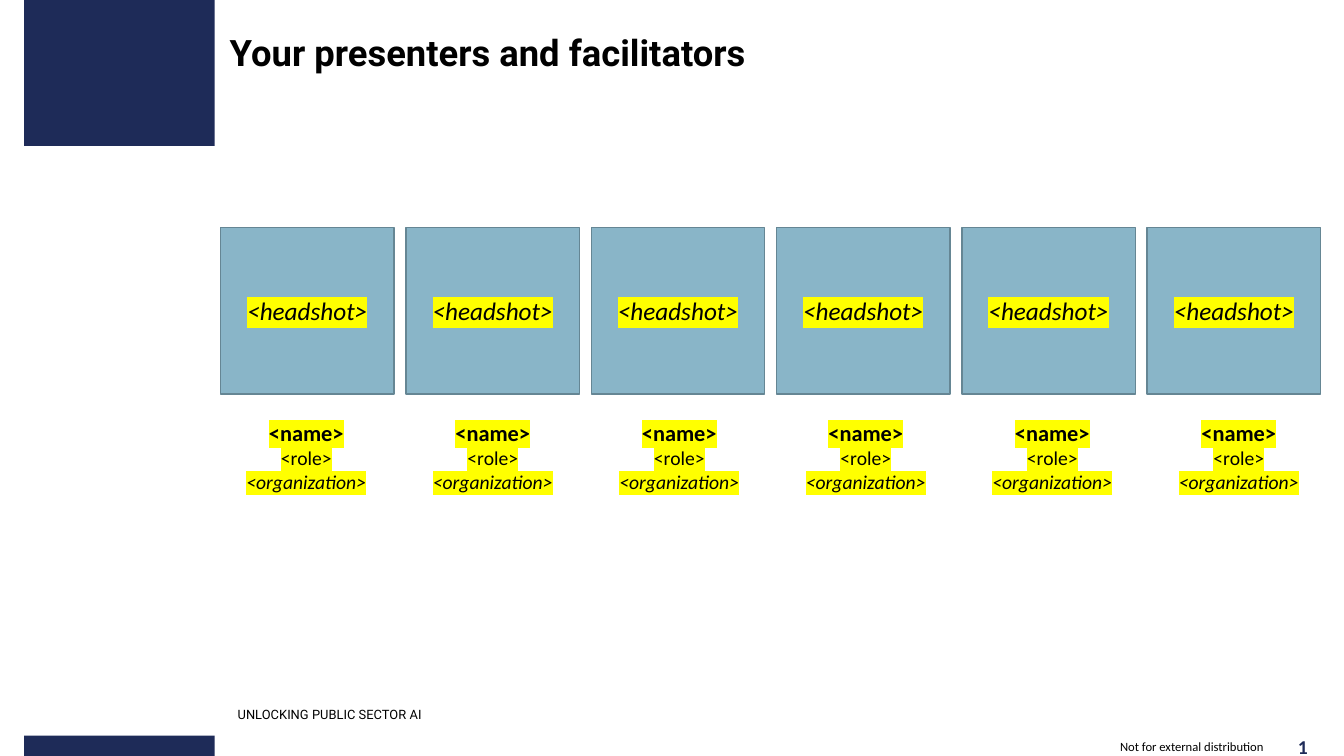
from dataclasses import dataclass

from lxml.etree import Element, SubElement
from pptx import Presentation
from pptx.dml.color import RGBColor
from pptx.enum.shapes import MSO_SHAPE
from pptx.enum.text import MSO_ANCHOR, PP_ALIGN
from pptx.oxml.ns import qn
from pptx.util import Cm, Pt

# Content
TITLE = "Your presenters and facilitators"
PROGRAMME = "UNLOCKING PUBLIC SECTOR AI"
NOTICE = "Not for external distribution"
PAGE_NUMBER = "1"
PRESENTERS = [("<headshot>", "<name>", "<role>", "<organization>")] * 6


@dataclass(frozen=True)
class Theme:
    navy: str = "1E2B58"
    card: str = "89B5C8"
    card_line: str = "658694"
    ink: str = "000000"
    highlight: str = "FFFF00"
    heading_font: str = "Roboto"
    body_font: str = "Calibri"
    title_size: float = 26
    headshot_size: float = 18
    name_size: float = 16
    detail_size: float = 14
    page_size: float = 14
    programme_size: float = 9.2
    notice_size: float = 9


THEME = Theme()

# Layout in centimetres
SLIDE_WIDTH, SLIDE_HEIGHT = 33.87, 19.05
BAND_LEFT, BAND_WIDTH = 0.61, 4.8
BANDS = [(0, 3.68), (18.54, 0.51)]
CARD_LEFT, CARD_TOP, CARD_WIDTH, CARD_HEIGHT, CARD_STEP = 5.56, 5.74, 4.37, 4.19, 4.67
CAPTION_LEFT, CAPTION_TOP, CAPTION_WIDTH, CAPTION_HEIGHT, CAPTION_STEP = 5.41, 10.44, 4.62, 3.58, 4.7


def add_rectangle(slide, box, fill, line=None):
    shape = slide.shapes.add_shape(MSO_SHAPE.RECTANGLE, *map(Cm, box))
    shape.shadow.inherit = False
    shape.fill.solid()
    shape.fill.fore_color.rgb = RGBColor.from_string(fill)
    if line:
        shape.line.color.rgb = RGBColor.from_string(line)
        shape.line.width = Pt(1)
    else:
        shape.line.fill.background()
    return shape


def style_paragraph(paragraph, size, font=THEME.body_font, color=THEME.ink,
                    bold=False, italic=False, highlight=None, align=PP_ALIGN.CENTER):
    paragraph.alignment = align
    for run in paragraph.runs:
        run.font.size = Pt(size)
        run.font.bold = bold
        run.font.italic = italic
        run.font.color.rgb = RGBColor.from_string(color)
        run.font.name = font
        if highlight:
            mark = Element(qn("a:highlight"))
            SubElement(mark, qn("a:srgbClr"), val=highlight)
            run.font._element.find(qn("a:solidFill")).addnext(mark)


def add_text(slide, box, text, insets=None, anchor=MSO_ANCHOR.TOP):
    text_frame = slide.shapes.add_textbox(*map(Cm, box)).text_frame
    text_frame.word_wrap = True
    text_frame.vertical_anchor = anchor
    if insets:
        (text_frame.margin_left, text_frame.margin_top,
         text_frame.margin_right, text_frame.margin_bottom) = map(Cm, insets)
    text_frame.text = text
    return text_frame.paragraphs


def add_presenter(slide, index, headshot, name, role, organization):
    # Headshot card
    card = add_rectangle(
        slide, (CARD_LEFT + index * CARD_STEP, CARD_TOP, CARD_WIDTH, CARD_HEIGHT),
        THEME.card, THEME.card_line)
    card.text_frame.text = headshot
    card.text_frame.vertical_anchor = MSO_ANCHOR.MIDDLE
    style_paragraph(card.text_frame.paragraphs[0], THEME.headshot_size,
                    italic=True, highlight=THEME.highlight)

    # Caption below the card
    box = (CAPTION_LEFT + index * CAPTION_STEP, CAPTION_TOP, CAPTION_WIDTH, CAPTION_HEIGHT)
    name_line, role_line, organization_line = add_text(
        slide, box, "\n".join((name, role, organization)))
    style_paragraph(name_line, THEME.name_size, bold=True, highlight=THEME.highlight)
    style_paragraph(role_line, THEME.detail_size, highlight=THEME.highlight)
    style_paragraph(organization_line, THEME.detail_size, italic=True, highlight=THEME.highlight)


def main():
    presentation = Presentation()
    presentation.slide_width, presentation.slide_height = Cm(SLIDE_WIDTH), Cm(SLIDE_HEIGHT)
    slide = presentation.slides.add_slide(presentation.slide_layouts[6])

    # Navy bands
    for top, height in BANDS:
        add_rectangle(slide, (BAND_LEFT, top, BAND_WIDTH, height), THEME.navy)

    # Title
    title, = add_text(slide, (5.79, 0.76, 22.38, 2.34), TITLE, insets=(0, 0, 0.25, 0))
    style_paragraph(title, THEME.title_size, THEME.heading_font, bold=True, align=PP_ALIGN.LEFT)

    # Footer
    programme, = add_text(slide, (5.74, 17.75, 6.96, 0.56), PROGRAMME)
    programme.line_spacing = 0.8
    style_paragraph(programme, THEME.programme_size, THEME.heading_font, align=PP_ALIGN.LEFT)
    page, = add_text(slide, (32.44, 18.44, 0.79, 0.76), PAGE_NUMBER,
                     insets=(0, 0, 0, 0), anchor=MSO_ANCHOR.MIDDLE)
    style_paragraph(page, THEME.page_size, color=THEME.navy, bold=True)
    notice, = add_text(slide, (27.89, 18.64, 4.29, 0.36), NOTICE,
                       insets=(0, 0, 0, 0), anchor=MSO_ANCHOR.MIDDLE)
    style_paragraph(notice, THEME.notice_size)

    # Presenters
    for index, presenter in enumerate(PRESENTERS):
        add_presenter(slide, index, *presenter)

    presentation.save("out.pptx")


if __name__ == "__main__":
    main()
